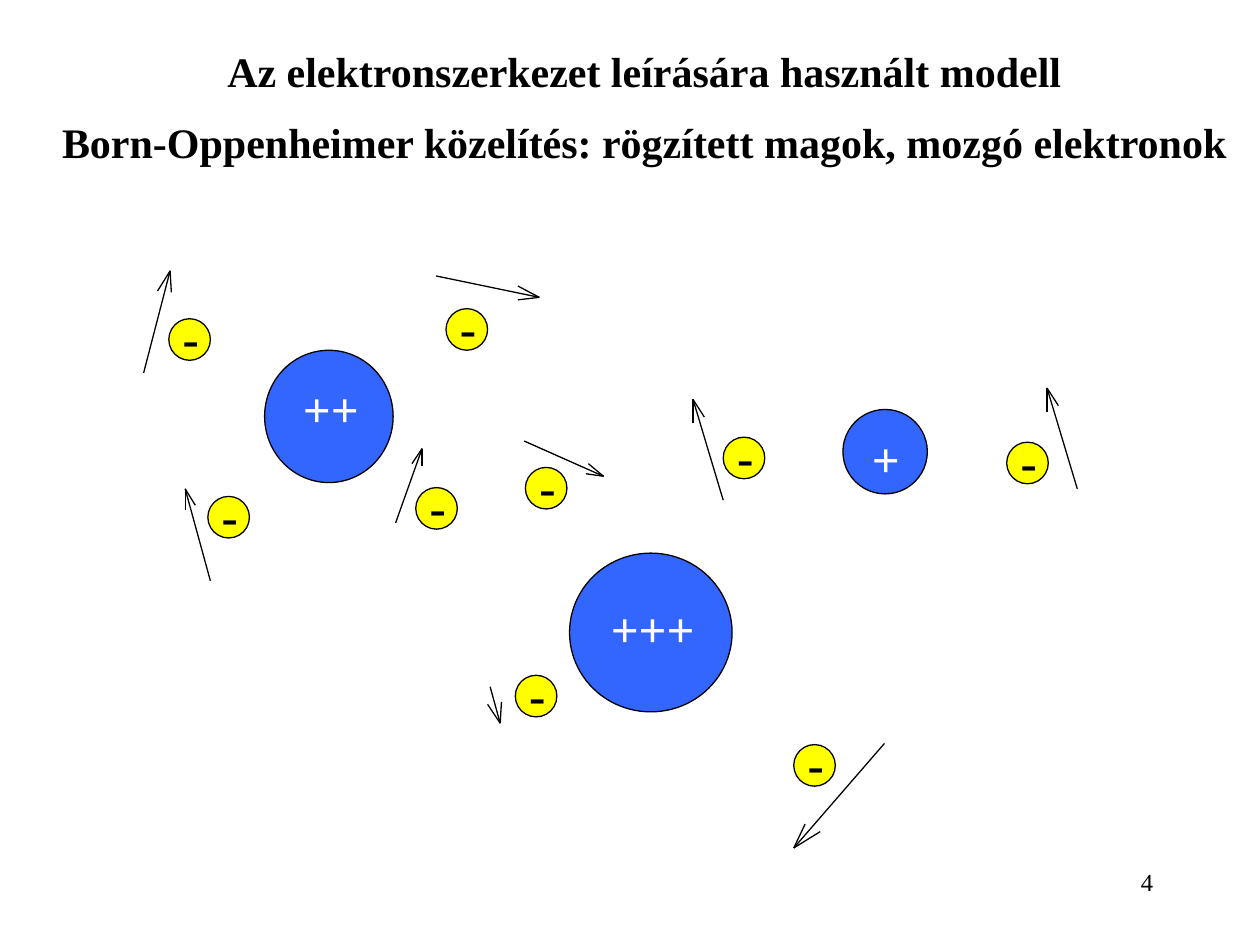
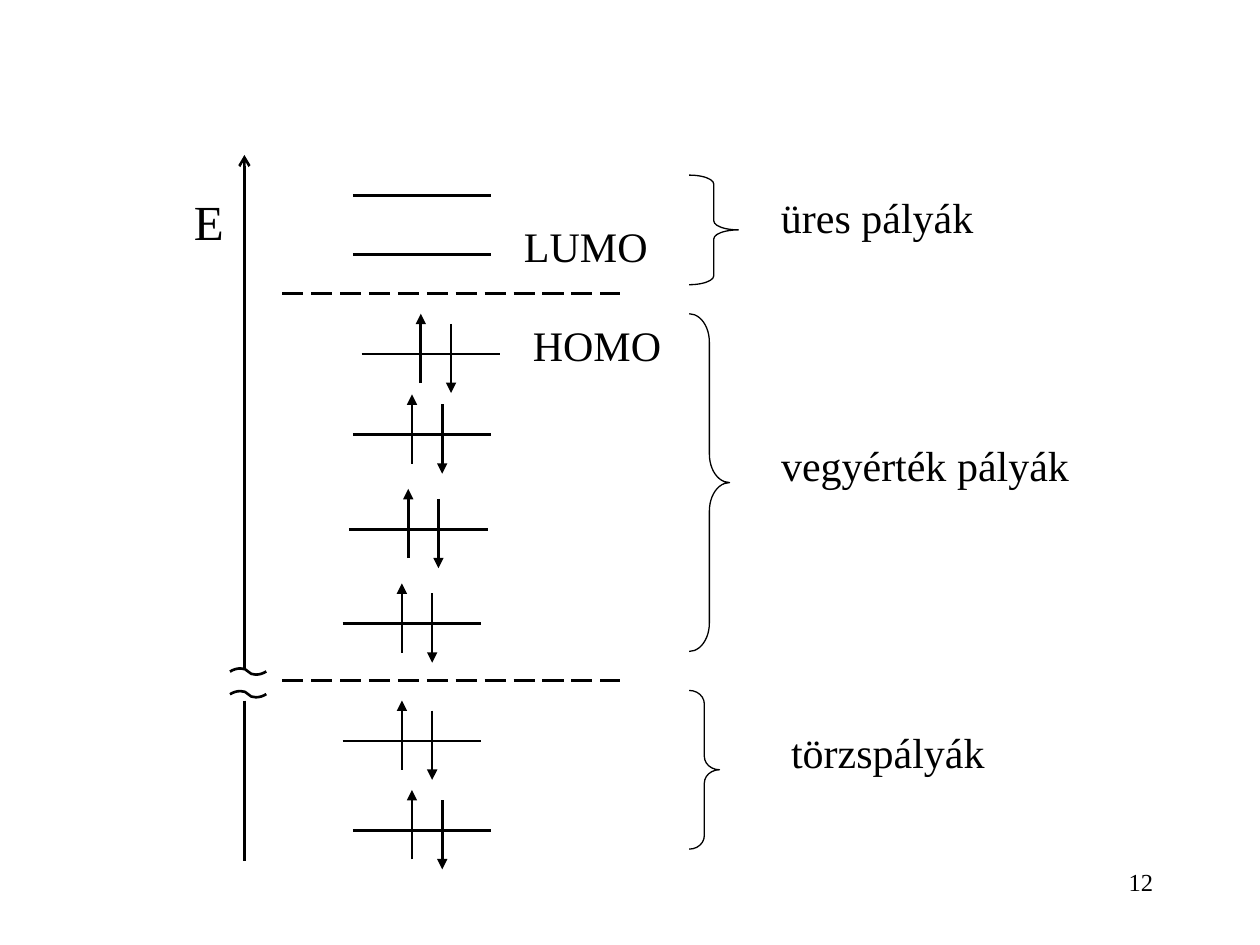
from lxml.etree import SubElement
from pptx import Presentation
from pptx.dml.color import RGBColor
from pptx.enum.dml import MSO_LINE
from pptx.enum.shapes import MSO_CONNECTOR, MSO_SHAPE
from pptx.enum.text import MSO_ANCHOR, MSO_AUTO_SIZE, PP_ALIGN
from pptx.oxml.ns import qn
from pptx.util import Inches, Pt

FONT = "Times New Roman"
BLACK, WHITE = "000000", "FFFFFF"
NUCLEUS_BLUE, ELECTRON_YELLOW = "3366FF", "FFFF00"


def write_text(shape, text, size=24, color=BLACK, bold=False, align=PP_ALIGN.LEFT,
               anchor=MSO_ANCHOR.TOP, wrap=True):
    frame = shape.text_frame
    frame.auto_size = MSO_AUTO_SIZE.NONE
    frame.word_wrap = wrap
    frame.vertical_anchor = anchor
    frame.text = text
    for index, paragraph in enumerate(frame.paragraphs):
        paragraph.alignment = align
        paragraph.space_before = Pt(size / 2 if index else 0)
        paragraph.font.name = FONT
        paragraph.font.size = Pt(size)
        paragraph.font.bold = bold
        paragraph.font.color.rgb = RGBColor.from_string(color)


def add_line(slide, start, end, width=1.5, head=None, kind=MSO_CONNECTOR.STRAIGHT):
    connector = slide.shapes.add_connector(kind, *map(Inches, (*start, *end)))
    connector.line.color.rgb = RGBColor.from_string(BLACK)
    connector.line.width = Pt(width)
    if head:
        SubElement(connector.line._get_or_add_ln(), qn("a:tailEnd"), type=head)
    SubElement(connector._element.spPr, qn("a:effectLst"))
    return connector


presentation = Presentation()
presentation.slide_width = Inches(10)
presentation.slide_height = Inches(7.5)
model_slide = presentation.slides.add_slide(presentation.slide_layouts[5])
orbital_slide = presentation.slides.add_slide(presentation.slide_layouts[6])

for slide, number in ((model_slide, "4"), (orbital_slide, "12")):
    box = slide.shapes.add_textbox(*map(Inches, (7.17, 6.83, 2.08, 0.5)))
    write_text(box, number, size=14, align=PP_ALIGN.RIGHT)

title = model_slide.shapes.title
title.left, title.top, title.width, title.height = map(Inches, (0, 0.31, 10.23, 1.11))
write_text(title, "Az elektronszerkezet leírására használt modell\n"
           "Born-Oppenheimer közelítés: rögzített magok, mozgó elektronok",
           bold=True, align=PP_ALIGN.CENTER)

nuclei = [
    ("++", (2.1, 2.78, 1.02, 1.05), (2.27, 2.95, 0.71, 0.57)),
    ("+", (6.69, 3.25, 0.67, 0.67), (6.78, 3.35, 0.5, 0.57)),
    ("+++", (4.52, 4.39, 1.29, 1.26), (4.73, 4.7, 0.9, 0.57)),
]
electrons = [(3.54, 2.45), (7.99, 3.51), (1.65, 3.94), (3.3, 3.87), (1.34, 2.53),
             (4.17, 3.71), (5.74, 3.47), (4.09, 5.36), (6.3, 5.91)]
particles = [(*nucleus, NUCLEUS_BLUE, WHITE) for nucleus in nuclei]
particles += [("-", (x, y, 0.33, 0.33), (x + 0.01, y - 0.14, 0.33, 0.57),
               ELECTRON_YELLOW, BLACK) for x, y in electrons]
for charge, circle_bounds, charge_bounds, fill, color in particles:
    circle = model_slide.shapes.add_shape(MSO_SHAPE.OVAL, *map(Inches, circle_bounds))
    circle.shadow.inherit = False
    circle.fill.solid()
    circle.fill.fore_color.rgb = RGBColor.from_string(fill)
    circle.line.color.rgb = RGBColor.from_string(BLACK)
    circle.line.width = Pt(0.75)
    box = model_slide.shapes.add_textbox(*map(Inches, charge_bounds))
    write_text(box, charge, size=28, color=color, bold=True, align=PP_ALIGN.CENTER,
               anchor=MSO_ANCHOR.MIDDLE, wrap=charge != "-")

velocities = [
    ((3.89, 5.45), (3.97, 5.74), (3.87, 5.59), (3.98, 5.57)),
    ((8.55, 3.88), (8.31, 3.08), (8.4, 3.22), (8.31, 3.27)),
    ((3.46, 2.19), (4.28, 2.36), (4.11, 2.38), (4.11, 2.27)),
    ((7.02, 5.9), (6.3, 6.73), (6.39, 6.54), (6.51, 6.6)),
    ((1.14, 2.96), (1.35, 2.15), (1.36, 2.32), (1.25, 2.31)),
    ((1.67, 4.61), (1.47, 3.88), (1.55, 4.01), (1.47, 4.05)),
    ((5.74, 3.97), (5.5, 3.17), (5.59, 3.31), (5.5, 3.36)),
    ((4.16, 3.5), (4.79, 3.78), (4.65, 3.76), (4.67, 3.68)),
    ((3.14, 4.15), (3.35, 3.56), (3.35, 3.7), (3.27, 3.68)),
]
for start, tip, *barbs in velocities:
    for end in (start, *barbs):
        add_line(model_slide, tip, end, width=0.75)

add_line(orbital_slide, (1.94, 5.32), (1.94, 1.23), head="arrow")
add_line(orbital_slide, (1.94, 5.56), (1.94, 6.83))
for y in (5.25, 5.43):
    axis_break = add_line(orbital_slide, (1.85, y), (2.09, y + 0.16), kind=MSO_CONNECTOR.CURVE)
    axis_break._element.spPr.find(qn("a:xfrm")).set("rot", str(326 * 60000))

for y in (2.33, 5.4):
    separator = add_line(orbital_slide, (2.24, y), (4.92, y))
    separator.line.dash_style = MSO_LINE.LONG_DASH

empty_levels = [(2.8, 1.55), (2.8, 2.02)]
filled_levels = [(2.87, 2.81), (2.8, 3.45), (2.77, 4.2), (2.72, 4.95), (2.72, 5.88), (2.8, 6.59)]
for x, y in empty_levels + filled_levels:
    add_line(orbital_slide, (x, y), (x + 1.1, y))
for x, y in filled_levels:
    add_line(orbital_slide, (x + 0.47, y + 0.23), (x + 0.47, y - 0.32), head="triangle")
    add_line(orbital_slide, (x + 0.71, y - 0.24), (x + 0.71, y + 0.31), head="triangle")

for y, width, height, curvature in ((1.39, 0.39, 0.87, 0.183), (2.49, 0.32, 2.68, 0.706),
                                    (5.48, 0.24, 1.26, 0.445)):
    brace = orbital_slide.shapes.add_shape(
        MSO_SHAPE.RIGHT_BRACE, *map(Inches, (5.47, y, width, height)))
    brace.adjustments[0] = curvature
    brace.shadow.inherit = False
    brace.fill.background()
    brace.line.color.rgb = RGBColor.from_string(BLACK)
    brace.line.width = Pt(0.75)

labels = [
    ("E", (1.44, 1.47, 0.63, 0.57), 28),
    ("LUMO", (4.06, 1.7, 1.42, 0.5), 24),
    ("HOMO", (4.13, 2.49, 1.42, 0.5), 24),
    ("üres pályák", (6.1, 1.47, 2.36, 0.5), 24),
    ("vegyérték pályák", (6.1, 3.44, 2.91, 0.5), 24),
    ("törzspályák", (6.18, 5.72, 2.05, 0.5), 24),
]
for text, bounds, size in labels:
    box = orbital_slide.shapes.add_textbox(*map(Inches, bounds))
    write_text(box, text, size=size)

presentation.save("out.pptx")
